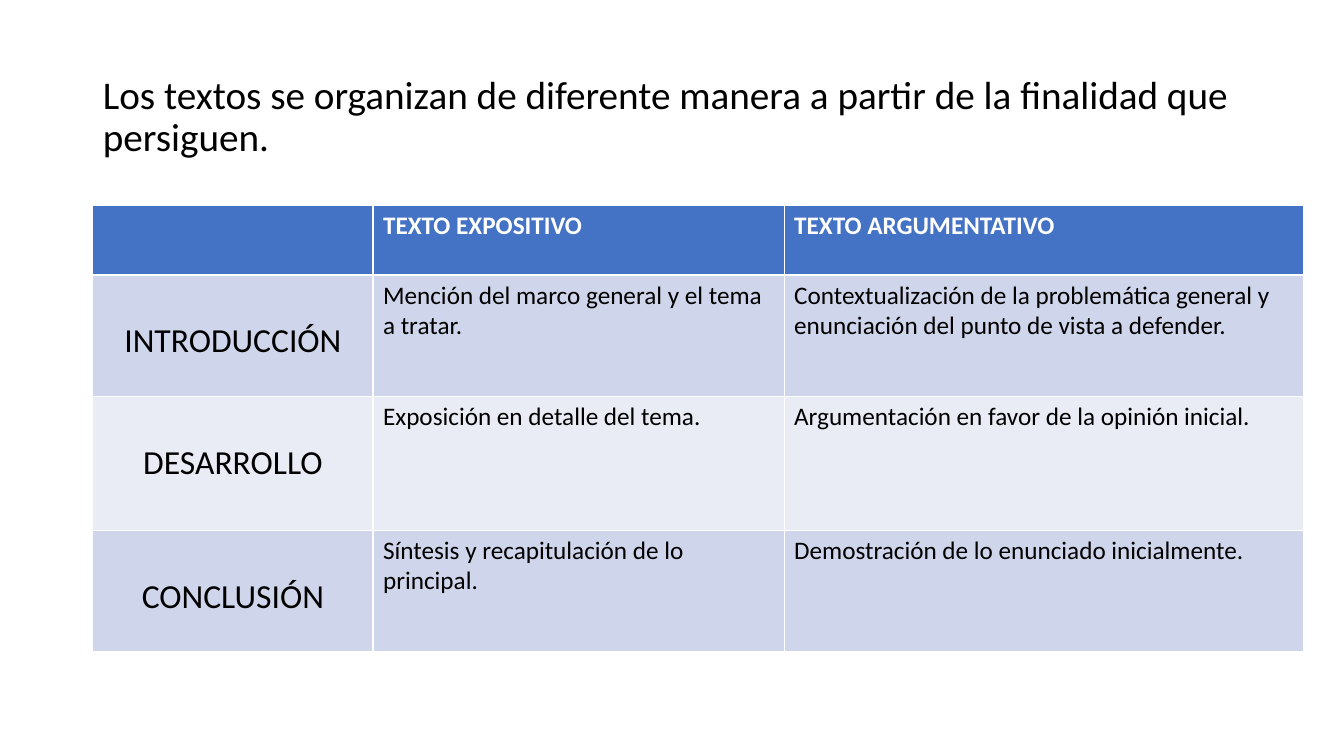
from pptx import Presentation
from pptx.dml.color import RGBColor
from pptx.enum.text import MSO_ANCHOR as Anchor, MSO_AUTO_SIZE as AutoSize, PP_ALIGN as Align
from pptx.util import Cm, Pt

FONT = "Calibri"
COLORS = {
    "ink": "000000",
    "header": "4472C4",
    "header_text": "FFFFFF",
    "band_dark": "CFD5EA",
    "band_light": "E9EBF5",
}
HEADING = "Los textos se organizan de diferente manera a partir de la finalidad que persiguen."
COLUMN_WIDTHS = (7.06, 10.36, 13.08)
ROW_HEIGHTS = (1.75, 3.07, 3.36, 3.07)
COMPARISON = (
    ("", "TEXTO EXPOSITIVO", "TEXTO ARGUMENTATIVO"),
    ("INTRODUCCIÓN", "Mención del marco general y el tema a tratar.",
     "Contextualización de la problemática general y enunciación del punto de vista a defender."),
    ("DESARROLLO", "Exposición en detalle del tema.",
     "Argumentación en favor de la opinión inicial."),
    ("CONCLUSIÓN", "Síntesis y recapitulación de lo principal.",
     "Demostración de lo enunciado inicialmente."),
)


def color(name):
    return RGBColor.from_string(COLORS[name])


def write(paragraph, text, size, ink="ink", bold=False, align=Align.LEFT):
    paragraph.alignment = align
    run = paragraph.add_run()
    run.text = text
    run.font.name = FONT
    run.font.size = Pt(size)
    run.font.bold = bold
    run.font.color.rgb = color(ink)


def add_heading(slide):
    heading = slide.shapes.title
    heading.left, heading.top = Cm(2.34), Cm(1.78)
    heading.width, heading.height = Cm(29.21), Cm(2.54)
    frame = heading.text_frame
    frame.word_wrap = True
    frame.auto_size = AutoSize.NONE
    frame.vertical_anchor = Anchor.TOP
    line = frame.paragraphs[0]
    line.line_spacing = 0.9
    write(line, HEADING, 28)


def fill_cell(cell, text, row, column):
    """Style a cell by its role: header, stage label or description."""
    band = "header" if row == 0 else ("band_light", "band_dark")[row % 2]
    cell.fill.solid()
    cell.fill.fore_color.rgb = color(band)
    if not text:
        return
    line = cell.text_frame.paragraphs[0]
    if row == 0:
        write(line, text, 18, ink="header_text", bold=True)
    elif column == 0:
        cell.margin_top = Cm(1.16)
        write(line, text, 24, align=Align.CENTER)
    else:
        write(line, text, 18)


def add_comparison(slide):
    frame = slide.shapes.add_table(
        len(ROW_HEIGHTS), len(COLUMN_WIDTHS), Cm(2.34), Cm(5.18),
        Cm(sum(COLUMN_WIDTHS)), Cm(sum(ROW_HEIGHTS)))
    table = frame.table
    for column, width in zip(table.columns, COLUMN_WIDTHS):
        column.width = Cm(width)
    for row, height in zip(table.rows, ROW_HEIGHTS):
        row.height = Cm(height)
    for r, texts in enumerate(COMPARISON):
        for c, text in enumerate(texts):
            fill_cell(table.cell(r, c), text, r, c)


def main():
    deck = Presentation()
    deck.slide_width, deck.slide_height = Cm(33.87), Cm(19.05)
    slide = deck.slides.add_slide(deck.slide_layouts.get_by_name("Title Only"))
    add_heading(slide)
    add_comparison(slide)
    deck.save("out.pptx")


if __name__ == "__main__":
    main()
